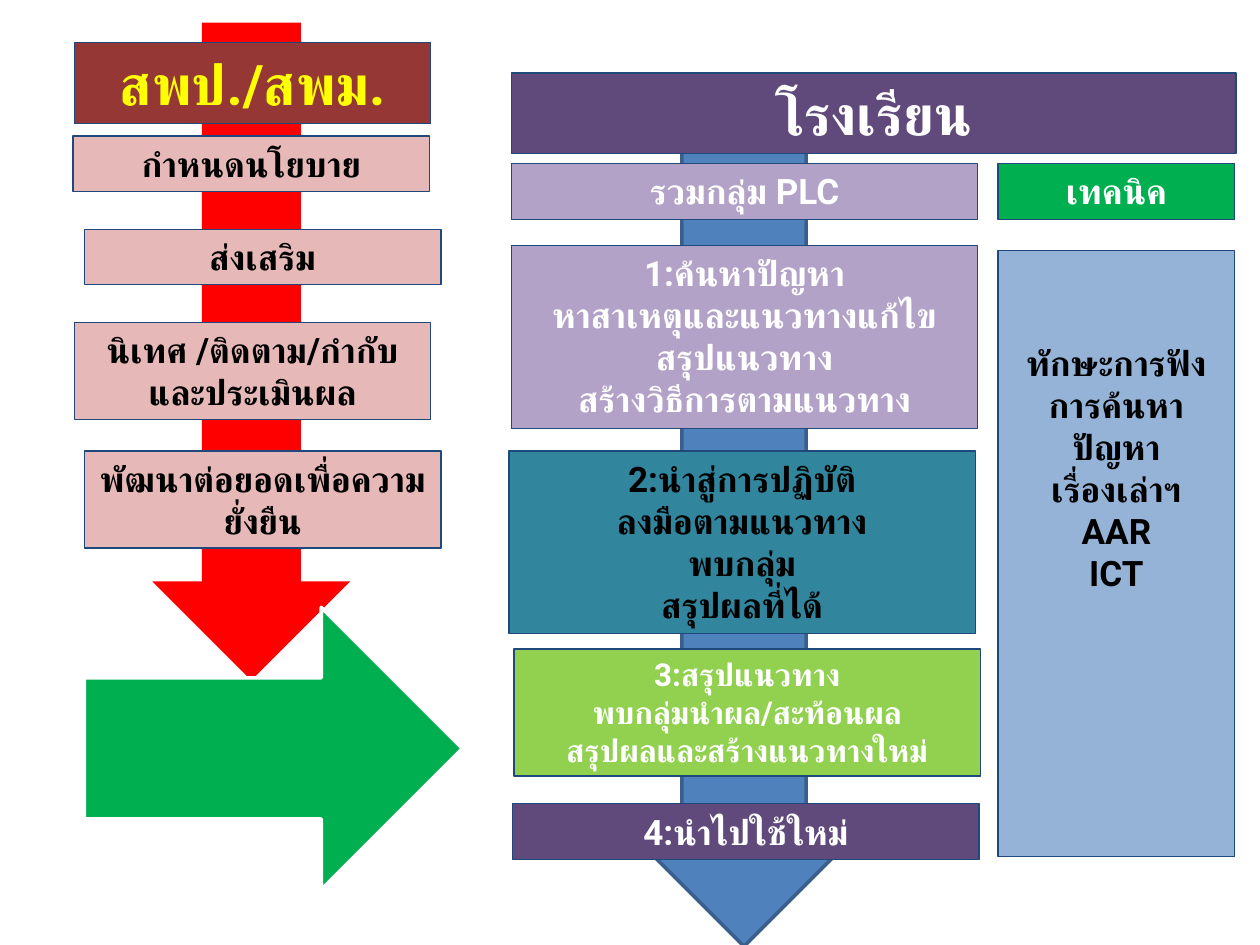
"""Build a slide pairing the education office's tasks with the school's PLC steps."""
from dataclasses import dataclass
from typing import Optional

from lxml import etree
from pptx import Presentation
from pptx.dml.color import RGBColor
from pptx.enum.shapes import MSO_SHAPE
from pptx.enum.text import MSO_ANCHOR, MSO_AUTO_SIZE, PP_ALIGN
from pptx.oxml.ns import qn
from pptx.util import Inches, Pt

RECTANGLE = MSO_SHAPE.RECTANGLE
DOWN_ARROW = MSO_SHAPE.DOWN_ARROW
RIGHT_ARROW = MSO_SHAPE.RIGHT_ARROW
TOP = MSO_ANCHOR.TOP
CENTER = PP_ALIGN.CENTER
GROW = MSO_AUTO_SIZE.SHAPE_TO_FIT_TEXT

FONT = "Roboto"
BLACK = RGBColor(0x00, 0x00, 0x00)
WHITE = RGBColor(0xFF, 0xFF, 0xFF)
YELLOW = RGBColor(0xFF, 0xFF, 0x00)
RED = RGBColor(0xFF, 0x00, 0x00)
MAROON = RGBColor(0x95, 0x37, 0x35)
PINK = RGBColor(0xE6, 0xB9, 0xB8)
PURPLE = RGBColor(0x60, 0x4A, 0x7B)
LILAC = RGBColor(0xB3, 0xA2, 0xC7)
TEAL = RGBColor(0x31, 0x85, 0x9C)
LIME = RGBColor(0x92, 0xD0, 0x50)
GREEN = RGBColor(0x00, 0xB0, 0x50)
BLUE = RGBColor(0x4F, 0x81, 0xBD)
DARK_BLUE = RGBColor(0x3A, 0x5F, 0x8C)
PALE_BLUE = RGBColor(0x95, 0xB3, 0xD7)
NAVY = RGBColor(0x1F, 0x49, 0x7D)

OFFICE_WIDTH = 2.83
STEP_WIDTH = 3.7
TECHNIQUE_LEFT, TECHNIQUE_WIDTH = 7.92, 1.88
ONE_LINE, TWO_LINES, FOUR_LINES, TITLE = 0.44, 0.77, 1.45, 0.64


@dataclass
class Arrow:
    """A block arrow."""
    preset: MSO_SHAPE
    left: float
    top: float
    width: float
    height: float
    fill: RGBColor
    outline: Optional[RGBColor] = None


@dataclass
class Box:
    """A labelled rectangle; newlines part paragraphs, vertical tabs part lines."""
    left: float
    top: float
    width: float
    height: float
    fill: RGBColor
    text: str
    color: RGBColor = WHITE
    size: int = 20
    inset_top: float = 0.05


ARROWS = [
    Arrow(DOWN_ARROW, 4.92, 1.09, 1.97, 6.42, BLUE, DARK_BLUE),
    Arrow(DOWN_ARROW, 1.21, 0.18, 1.57, 5.22, RED),
    Arrow(RIGHT_ARROW, 0.67, 4.82, 3, 2.24, GREEN, WHITE),
]

OFFICE_BOXES = [
    Box(0.59, 0.34, OFFICE_WIDTH, TITLE, MAROON, "สพป./สพม.", YELLOW, 32),
    Box(0.58, 1.08, OFFICE_WIDTH, ONE_LINE, PINK, "กำหนดนโยบาย", BLACK),
    Box(0.67, 1.82, OFFICE_WIDTH, ONE_LINE, PINK, "ส่งเสริม", BLACK),
    Box(0.59, 2.56, OFFICE_WIDTH, TWO_LINES, PINK,
        "นิเทศ /ติดตาม/กำกับและประเมินผล", BLACK),
    Box(0.67, 3.58, OFFICE_WIDTH, TWO_LINES, PINK,
        "พัฒนาต่อยอดเพื่อความยั่งยืน", BLACK),
]

SCHOOL_BOXES = [
    Box(4.06, 0.58, 5.75, TITLE, PURPLE, "โรงเรียน", size=32),
    Box(4.06, 1.3, STEP_WIDTH, ONE_LINE, LILAC, "รวมกลุ่ม PLC"),
    Box(4.06, 1.95, STEP_WIDTH, FOUR_LINES, LILAC,
        "1:ค้นหาปัญหา\nหาสาเหตุและแนวทางแก้ไข\n"
        "สรุปแนวทาง\vสร้างวิธีการตามแนวทาง"),
    Box(4.04, 3.58, STEP_WIDTH, FOUR_LINES, TEAL,
        "2:นำสู่การปฏิบัติ\nลงมือตามแนวทาง\vพบกลุ่ม\vสรุปผลที่ได้", BLACK),
    Box(4.08, 5.15, STEP_WIDTH, 1.01, LIME,
        "3:สรุปแนวทาง\vพบกลุ่มนำผล/สะท้อนผล\vสรุปผลและสร้างแนวทางใหม่",
        size=18),
    Box(4.07, 6.38, STEP_WIDTH, ONE_LINE, PURPLE, "4:นำไปใช้ใหม่"),
]

TECHNIQUE_BOXES = [
    Box(TECHNIQUE_LEFT, 1.3, TECHNIQUE_WIDTH, ONE_LINE, GREEN, "เทคนิค"),
    Box(TECHNIQUE_LEFT, 1.99, TECHNIQUE_WIDTH, 4.81, PALE_BLUE,
        "ทักษะการฟัง\nการค้นหาปัญหา\vเรื่องเล่าฯ\nAAR\nICT", BLACK,
        inset_top=0.72),
]


def add_filled(slide, preset: MSO_SHAPE, part, outline: Optional[RGBColor],
               line_width: float):
    """Add a flat preset shape with the part's place and fill."""
    shape = slide.shapes.add_shape(
        preset, Inches(part.left), Inches(part.top),
        Inches(part.width), Inches(part.height))
    shape.shadow.inherit = False
    shape.fill.solid()
    shape.fill.fore_color.rgb = part.fill
    if outline is None:
        shape.line.fill.background()
    else:
        shape.line.color.rgb = outline
        shape.line.width = Pt(line_width)
    return shape


def draw_arrow(slide, arrow: Arrow) -> None:
    """Draw one block arrow."""
    add_filled(slide, arrow.preset, arrow, arrow.outline, 2)


def draw_box(slide, box: Box) -> None:
    """Draw one rectangle with its centred bold text."""
    frame = add_filled(slide, RECTANGLE, box, NAVY, 0.75).text_frame
    frame.word_wrap = True
    frame.vertical_anchor = TOP
    frame.margin_top = Inches(box.inset_top)
    frame.text = box.text
    for paragraph in frame.paragraphs:
        paragraph.alignment = CENTER
        font = paragraph.font
        font.name = FONT
        font.size = Pt(box.size)
        font.bold = True
        font.color.rgb = box.color
        defaults = paragraph._p.pPr.find(qn("a:defRPr"))
        etree.SubElement(defaults, qn("a:cs"), typeface=FONT)
    if box.height < TECHNIQUE_BOXES[-1].height:
        frame.auto_size = GROW


def main() -> None:
    """Build and save the slide."""
    presentation = Presentation()
    presentation.slide_width = Inches(10)
    presentation.slide_height = Inches(7.5)
    slide = presentation.slides.add_slide(presentation.slide_layouts[6])
    for arrow in ARROWS:
        draw_arrow(slide, arrow)
    for box in OFFICE_BOXES + SCHOOL_BOXES + TECHNIQUE_BOXES:
        draw_box(slide, box)
    presentation.save("out.pptx")


if __name__ == "__main__":
    main()
